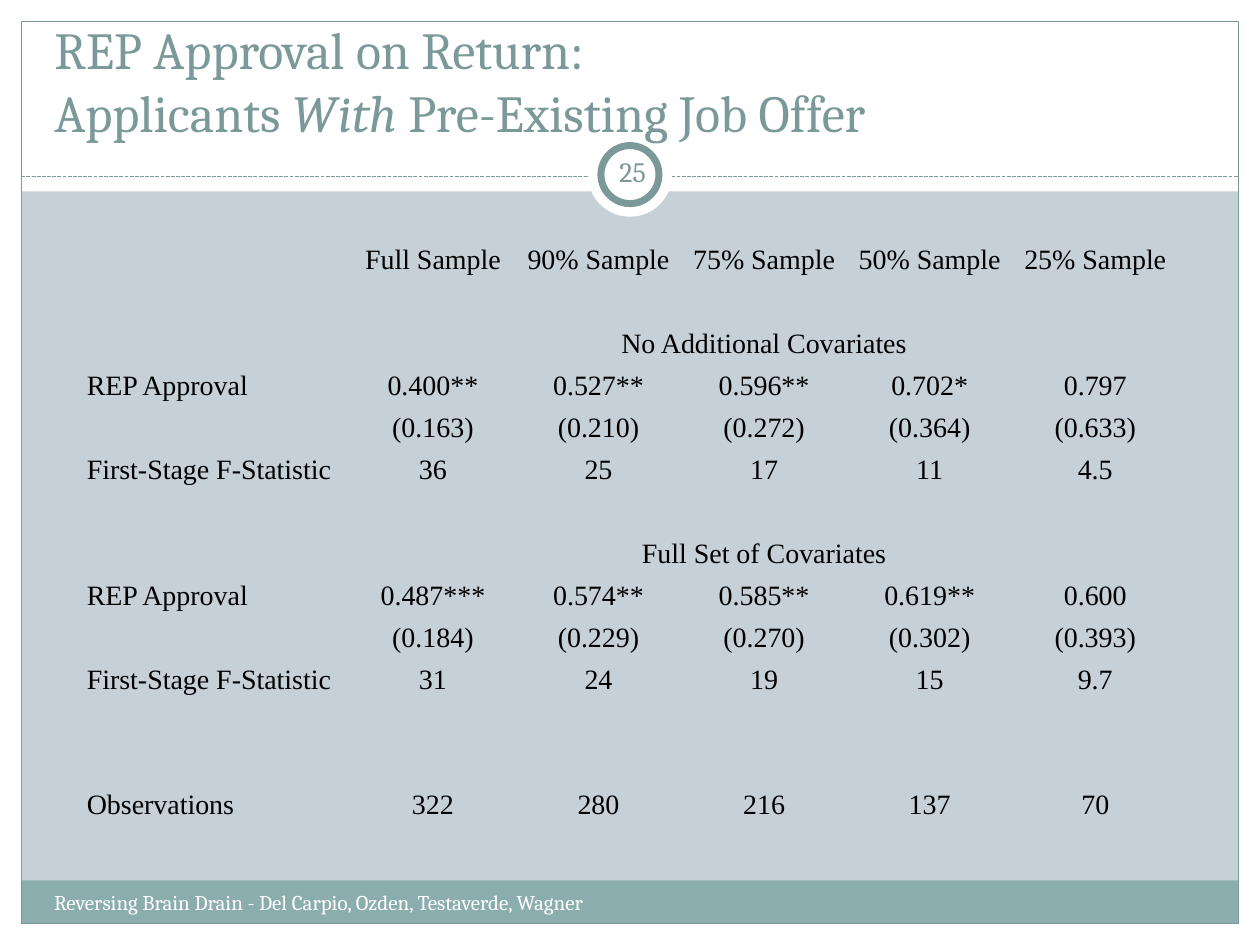
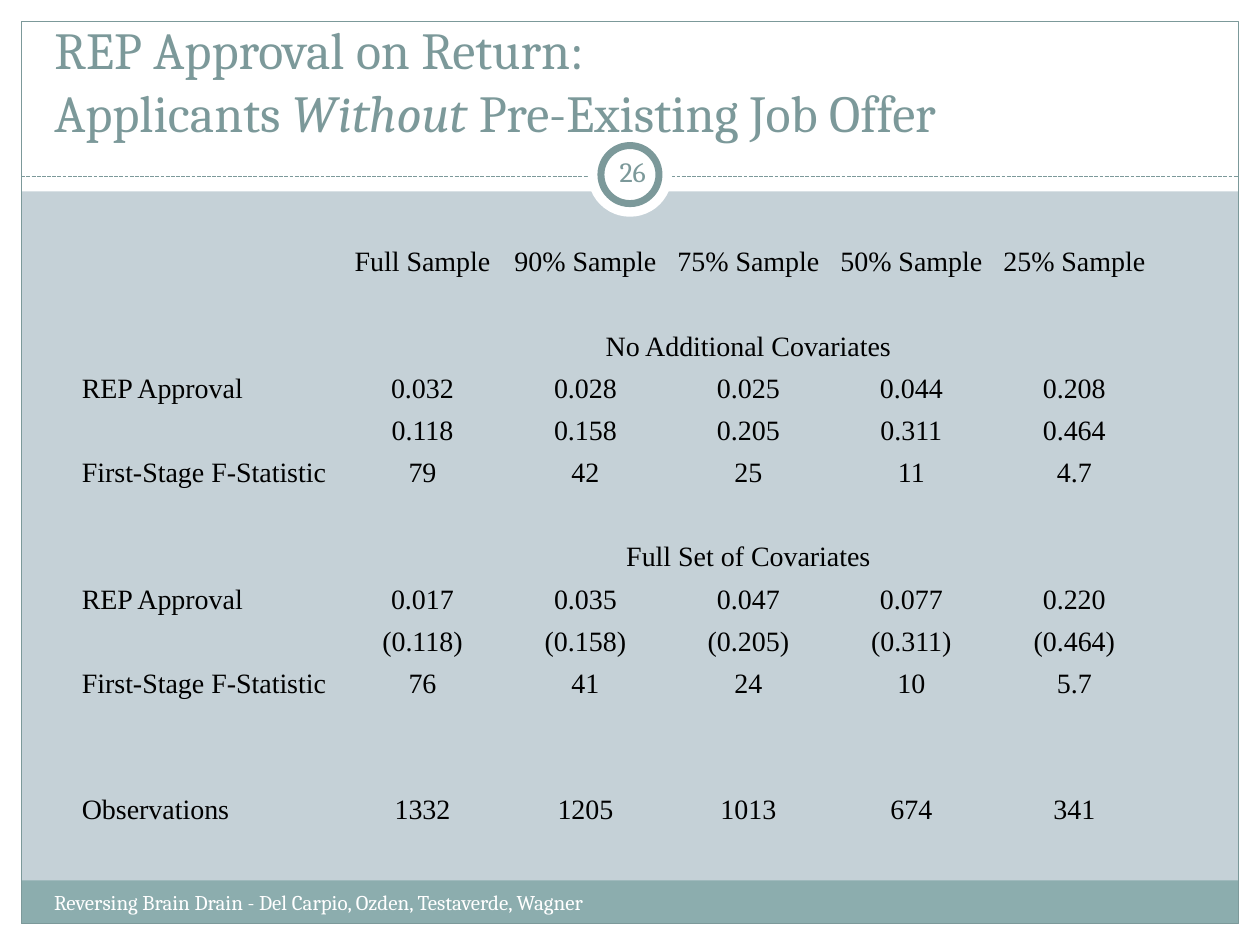
import collections
import dataclasses

import pptx
import pptx.dml.color
import pptx.enum.dml
import pptx.enum.shapes
import pptx.enum.text
import pptx.oxml
import pptx.oxml.ns
import pptx.util

Cm = pptx.util.Cm
Pt = pptx.util.Pt
SHAPE = pptx.enum.shapes.MSO_SHAPE
ALIGN = pptx.enum.text.PP_ALIGN
ANCHOR = pptx.enum.text.MSO_ANCHOR
Box = collections.namedtuple("Box", "left top width height")  # centimetres


@dataclasses.dataclass(frozen=True)
class Theme:
    backdrop: str = "C5D1D7"
    paper: str = "FFFFFF"
    band: str = "8CADAE"
    accent: str = "7C999A"
    ink: str = "000000"
    heading_font: str = "Cambria"
    table_font: str = "Times New Roman"
    title_size: float = 29.7
    body_size: float = 16
    footer_size: float = 12
    hairline: float = 0.75
    ring_line: float = 4


THEME = Theme()
PAGE = Box(0, 0, 25.4, 19.05)
EDGE = 0.43
HEADER_HEIGHT = 3.86
FRAME = Box(EDGE, EDGE, PAGE.width - 2 * EDGE, PAGE.height - 2 * EDGE)
FOOTER_BAND = Box(EDGE, 17.75, FRAME.width, 0.87)
TITLE = Box(0.84, 0.89, 23.7, 2.11)
FOOTER = Box(0.84, 17.81, 13.74, 1.02)
PAGE_NUMBER = Box(12.12, 2.84, 1.27, 1.22)
RULE_Y = 3.56
RING_CENTRE = (12.7, 3.52)
LABEL_SHARE = 0.242  # part of the table width taken by the row labels
NO_TABLE_STYLE = "{2D5ABB26-0587-4C30-8999-92F81FD0307C}"

FOOTER_TEXT = "Reversing Brain Drain - Del Carpio, Ozden, Testaverde, Wagner"
SAMPLES = ["Full Sample", "90% Sample", "75% Sample", "50% Sample", "25% Sample"]
PANELS = ["No Additional Covariates", "Full Set of Covariates"]
ROW_LABELS = ["REP Approval", "", "First-Stage F-Statistic"]

Results = collections.namedtuple("Results", "number emphasis box panels observations")
RESULTS = [
    Results(
        "25", "With ", Box(1.73, 4.72, 22.02, 11.84),
        [["0.400** 0.527** 0.596** 0.702* 0.797",
          "(0.163) (0.210) (0.272) (0.364) (0.633)",
          "36 25 17 11 4.5"],
         ["0.487*** 0.574** 0.585** 0.619** 0.600",
          "(0.184) (0.229) (0.270) (0.302) (0.393)",
          "31 24 19 15 9.7"]],
        "322 280 216 137 70"),
    Results(
        "26", "Without ", Box(1.63, 4.75, 21.67, 11.91),
        [["0.032 0.028 0.025 0.044 0.208",
          "0.118 0.158 0.205 0.311 0.464",
          "79 42 25 11 4.7"],
         ["0.017 0.035 0.047 0.077 0.220",
          "(0.118) (0.158) (0.205) (0.311) (0.464)",
          "76 41 24 10 5.7"]],
        "1332 1205 1013 674 341"),
]


def colour(code):
    return pptx.dml.color.RGBColor.from_string(code)


def lengths(box):
    return [Cm(value) for value in box]


def add_run(paragraph, text, size, code, font, italic=False):
    run = paragraph.add_run()
    run.text = text
    run.font.size = Pt(size)
    run.font.name = font
    run.font.italic = italic
    run.font.color.rgb = colour(code)


def add_plain_shape(shapes, preset, box, fill=None, line=None, weight=THEME.hairline):
    shape = shapes.add_shape(preset, *lengths(box))
    shape.shadow.inherit = False
    if fill:
        shape.fill.solid()
        shape.fill.fore_color.rgb = colour(fill)
    else:
        shape.fill.background()
    if line:
        shape.line.color.rgb = colour(line)
        shape.line.width = Pt(weight)
    else:
        shape.line.fill.background()
    return shape


def add_ring(shapes, centre, diameter, **style):
    x, y = centre
    box = Box(x - diameter / 2, y - diameter / 2, diameter, diameter)
    return add_plain_shape(shapes, SHAPE.OVAL, box, fill=THEME.paper, **style)


def add_rule(shapes, box, y):
    rule = shapes.add_connector(
        pptx.enum.shapes.MSO_CONNECTOR.STRAIGHT,
        Cm(box.left), Cm(y), Cm(box.left + box.width), Cm(y))
    rule.line.color.rgb = colour(THEME.accent)
    rule.line.width = Pt(THEME.hairline)
    rule.line.dash_style = pptx.enum.dml.MSO_LINE.SQUARE_DOT
    rule.element.spPr.append(pptx.oxml.parse_xml(
        "<a:effectLst %s/>" % pptx.oxml.ns.nsdecls("a")))
    return rule


def draw_frame(shapes, page):
    """White margins, footer band, outline, dashed rule and number ring."""
    margins = [
        Box(0, page.height - EDGE, page.width, EDGE),
        Box(0, 0, page.width, HEADER_HEIGHT),
        Box(0, 0, EDGE, page.height),
        Box(page.width - EDGE, 0, EDGE, page.height),
    ]
    parts = [add_plain_shape(shapes, SHAPE.RECTANGLE, margin, fill=THEME.paper)
             for margin in margins]
    parts += [
        add_plain_shape(shapes, SHAPE.RECTANGLE, FOOTER_BAND, fill=THEME.band),
        add_plain_shape(shapes, SHAPE.RECTANGLE, FRAME, line=THEME.accent),
        add_rule(shapes, FRAME, RULE_Y),
        add_ring(shapes, RING_CENTRE, 1.7),
        add_ring(shapes, RING_CENTRE, 1.17, line=THEME.accent, weight=THEME.ring_line),
    ]
    return parts


def prepare_layout(layout):
    layout.background.fill.solid()
    layout.background.fill.fore_color.rgb = colour(THEME.backdrop)
    for placeholder in list(layout.placeholders):
        if placeholder.placeholder_format.type != pptx.enum.shapes.PP_PLACEHOLDER.TITLE:
            placeholder.element.getparent().remove(placeholder.element)


def move_to_layout(parts, layout):
    """Share the drawn parts with every slide, behind the placeholders."""
    title = layout.placeholders[0].element
    for part in parts:
        title.addprevious(part.element)


def fill_title(title, box, emphasis):
    title.left, title.top, title.width, title.height = lengths(box)
    frame = title.text_frame
    frame.word_wrap = True
    frame.auto_size = pptx.enum.text.MSO_AUTO_SIZE.NONE
    frame.vertical_anchor = ANCHOR.BOTTOM
    paragraph = frame.paragraphs[0]
    paragraph.alignment = ALIGN.LEFT
    style = (THEME.title_size, THEME.accent, THEME.heading_font)
    add_run(paragraph, "REP Approval on Return:", *style)
    paragraph.add_line_break()
    add_run(paragraph, "Applicants ", *style)
    add_run(paragraph, emphasis, *style, italic=True)
    add_run(paragraph, "Pre-Existing Job Offer", *style)


def add_label(shapes, box, text, size, code, align=ALIGN.LEFT,
              anchor=ANCHOR.TOP, side_inset=0.25):
    frame = shapes.add_textbox(*lengths(box)).text_frame
    frame.word_wrap = True
    frame.vertical_anchor = anchor
    frame.margin_left = frame.margin_right = Cm(side_inset)
    frame.margin_top = frame.margin_bottom = Cm(0.13)
    frame.paragraphs[0].alignment = align
    add_run(frame.paragraphs[0], text, size, code, THEME.heading_font)


def table_rows(results):
    """Rows of cell texts; a panel heading has no label and a single text."""
    rows = [["", *SAMPLES], []]
    for heading, lines in zip(PANELS, results.panels):
        rows.append(["", heading])
        rows += [[label, *line.split()] for label, line in zip(ROW_LABELS, lines)]
        rows.append([])
    return rows + [[], ["Observations", *results.observations.split()]]


def fill_cell(cell, text, align):
    cell.fill.background()
    cell.vertical_anchor = ANCHOR.BOTTOM
    cell.margin_left = cell.margin_right = cell.margin_top = Cm(0.02)
    cell.margin_bottom = 0
    paragraph = cell.text_frame.paragraphs[0]
    paragraph.alignment = align
    if text:
        add_run(paragraph, text, THEME.body_size, THEME.ink, THEME.table_font)


def add_results_table(shapes, box, rows):
    columns = len(SAMPLES) + 1
    holder = shapes.add_table(len(rows), columns, *lengths(box))
    table = holder.table
    table.first_row = table.horz_banding = False
    for style in holder.element.iter(pptx.oxml.ns.qn("a:tableStyleId")):
        style.text = NO_TABLE_STYLE

    label_width = box.width * LABEL_SHARE
    for index, column in enumerate(table.columns):
        column.width = Cm((box.width - label_width) / len(SAMPLES) if index else label_width)

    for r, texts in enumerate(rows):
        table.rows[r].height = Cm(box.height / len(rows))
        for c in range(columns):
            fill_cell(table.cell(r, c), texts[c] if c < len(texts) else "",
                      ALIGN.CENTER if c else ALIGN.LEFT)
        if len(texts) == 2:
            table.cell(r, 1).merge(table.cell(r, columns - 1))


def fill_results_slide(slide, results):
    fill_title(slide.shapes.title, TITLE, results.emphasis)
    add_label(slide.shapes, FOOTER, FOOTER_TEXT, THEME.footer_size, THEME.paper)
    add_label(slide.shapes, PAGE_NUMBER, results.number, THEME.body_size, THEME.accent,
              align=ALIGN.CENTER, anchor=ANCHOR.MIDDLE, side_inset=0.13)
    add_results_table(slide.shapes, results.box, table_rows(results))


def main():
    deck = pptx.Presentation()
    deck.slide_width, deck.slide_height = Cm(PAGE.width), Cm(PAGE.height)
    layout = deck.slide_layouts[5]
    prepare_layout(layout)
    slides = [deck.slides.add_slide(layout) for _ in RESULTS]
    move_to_layout(draw_frame(slides[0].shapes, PAGE), layout)
    for slide, results in zip(slides, RESULTS):
        fill_results_slide(slide, results)
    deck.save("out.pptx")


if __name__ == "__main__":
    main()
